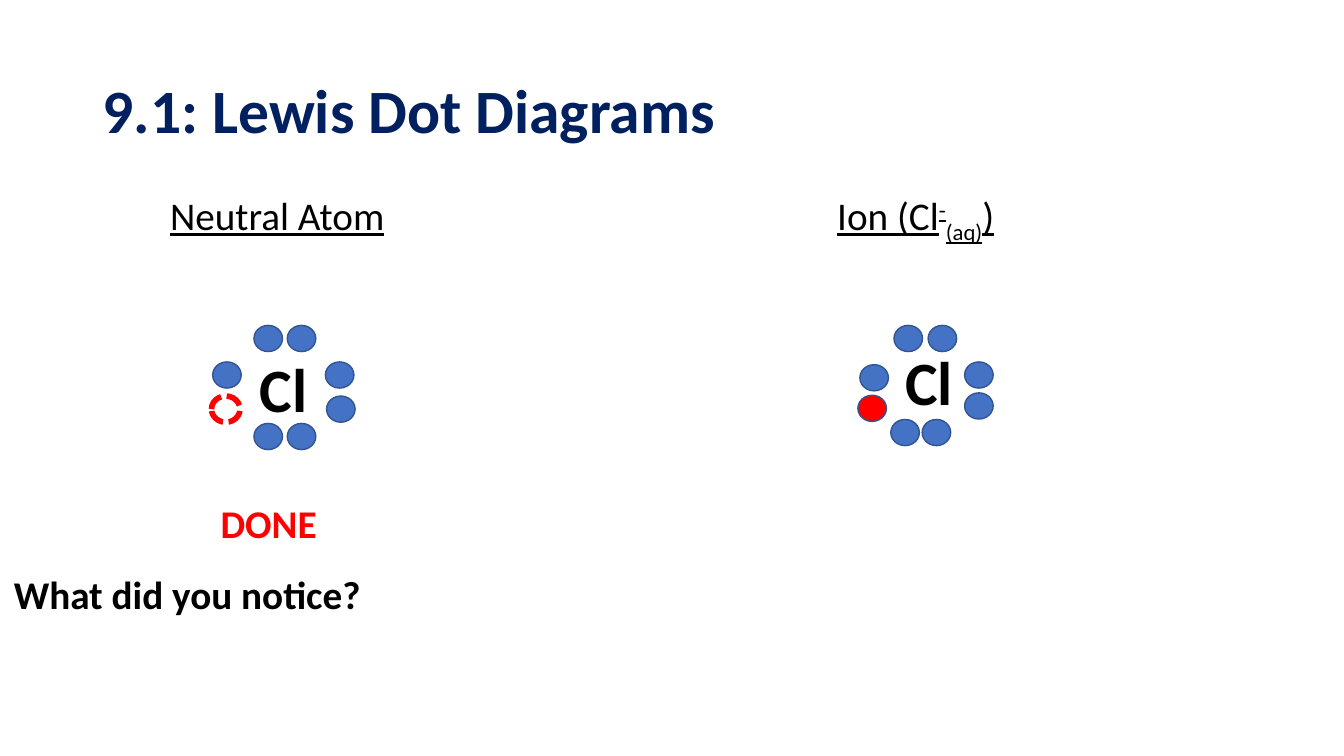
import dataclasses

import pptx
import pptx.dml.color
import pptx.enum.dml
import pptx.enum.shapes
import pptx.enum.text
import pptx.util

Cm = pptx.util.Cm
Pt = pptx.util.Pt
RGB = pptx.dml.color.RGBColor.from_string


@dataclasses.dataclass(frozen=True)
class Theme:
    font: str = "Calibri"
    title_color: str = "002060"
    text_color: str = "000000"
    accent: str = "FF0000"
    electron: str = "4472C4"
    electron_outline: str = "325491"
    large: int = 44
    body: int = 28
    outline: int = 1
    gap_outline: int = 4


theme = Theme()
presentation = pptx.Presentation()
presentation.slide_width = Cm(33.87)
presentation.slide_height = Cm(19.05)
slide = presentation.slides.add_slide(presentation.slide_layouts[6])


def add_text(box, parts, size=theme.body, color=theme.text_color, bold=False, underline=False):
    """Add a text box; parts are (text, baseline shift in percent) pairs."""
    shape = slide.shapes.add_textbox(*map(Cm, box))
    shape.text_frame.word_wrap = True
    paragraph = shape.text_frame.paragraphs[0]
    for text, baseline in parts:
        run = paragraph.add_run()
        run.text = text
        run.font.name = theme.font
        run.font.size = Pt(size)
        run.font.color.rgb = RGB(color)
        run.font.bold = bold
        run.font.underline = underline
        if baseline:
            run._r.get_or_add_rPr().set("baseline", str(baseline * 1000))
    return shape


def add_electron(left, top, fill=theme.electron):
    """Add one electron dot, or a dashed red ring when fill is None."""
    shape = slide.shapes.add_shape(
        pptx.enum.shapes.MSO_SHAPE.OVAL, Cm(left), Cm(top), Cm(0.72), Cm(0.66))
    shape.shadow.inherit = False
    if fill:
        shape.fill.solid()
        shape.fill.fore_color.rgb = RGB(fill)
        shape.line.color.rgb = RGB(theme.electron_outline)
        shape.line.width = Pt(theme.outline)
    else:
        shape.fill.background()
        shape.line.color.rgb = RGB(theme.accent)
        shape.line.width = Pt(theme.gap_outline)
        shape.line.dash_style = pptx.enum.dml.MSO_LINE.SQUARE_DOT


# Title and column headings
title = add_text((2.34, 1.02, 29.21, 3.68), [("9.1: Lewis Dot Diagrams", 0)],
                 theme.large, theme.title_color, bold=True)
title.text_frame.vertical_anchor = pptx.enum.text.MSO_ANCHOR.MIDDLE
title.text_frame.paragraphs[0].line_spacing = 0.9
add_text((4.04, 4.7, 6.05, 1.45), [("Neutral Atom", 0)], underline=True)
add_text((20.85, 4.7, 6.05, 1.45),
         [("Ion (Cl", 0), ("-", 30), ("(aq)", -25), (")", 0)], underline=True)

# Each diagram: symbol corner, seven valence electrons, then the eighth position
diagrams = [
    ((6.3, 8.71),
     [(6.4, 8.2), (7.24, 8.2), (8.2, 9.12), (8.23, 9.98),
      (7.24, 10.67), (6.4, 10.67), (5.36, 9.12)],
     (5.33, 9.98), None),
    ((22.56, 8.53),
     [(22.53, 8.2), (23.39, 8.2), (24.31, 9.12), (24.31, 9.9),
      (23.24, 10.57), (22.45, 10.57), (21.67, 9.19)],
     (21.62, 9.96), theme.accent),
]
for symbol_corner, electrons, eighth_position, eighth_fill in diagrams:
    add_text((*symbol_corner, 2.11, 2.13), [("Cl", 0)], theme.large, bold=True)
    for left, top in electrons:
        add_electron(left, top)
    add_electron(*eighth_position, eighth_fill)

# Closing prompts
add_text((5.31, 12.45, 3.23, 1.45), [("DONE", 0)], color=theme.accent, bold=True)
add_text((0.1, 14.25, 9.45, 1.45), [("What did you notice?", 0)], bold=True)

presentation.save("out.pptx")
